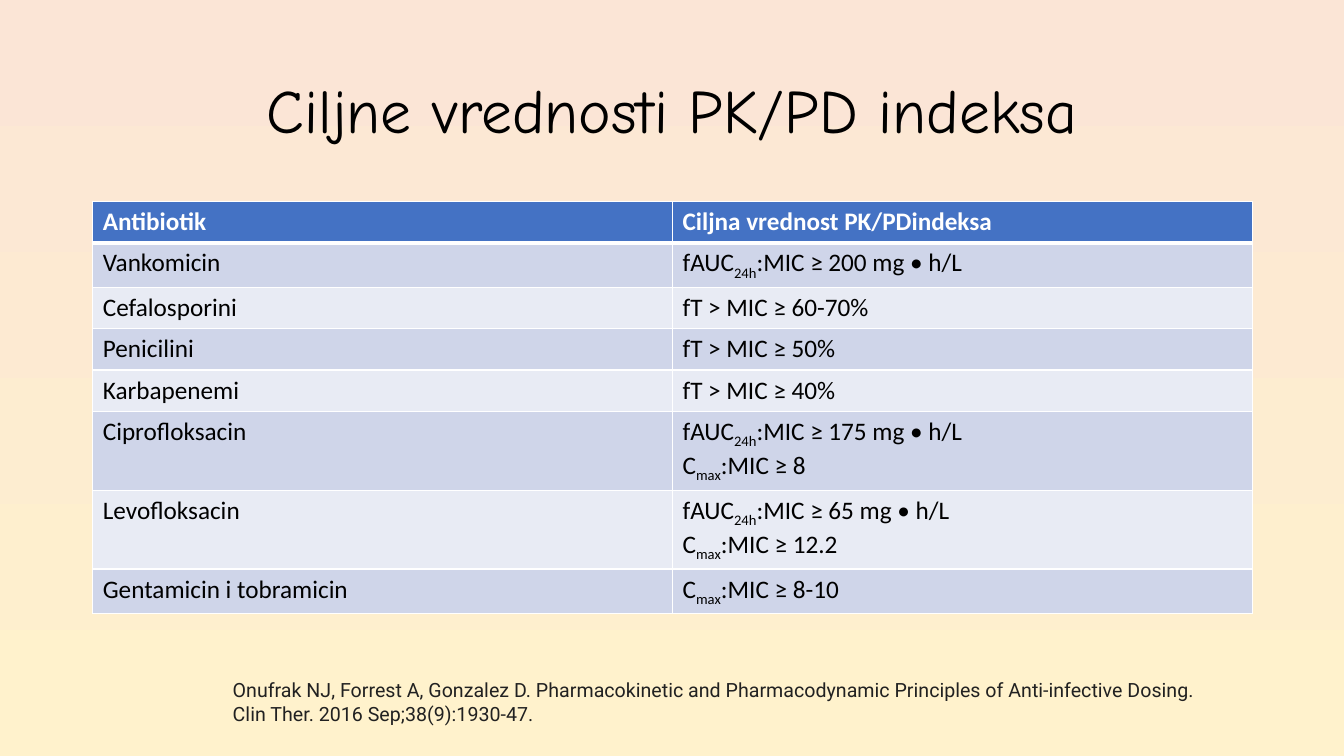
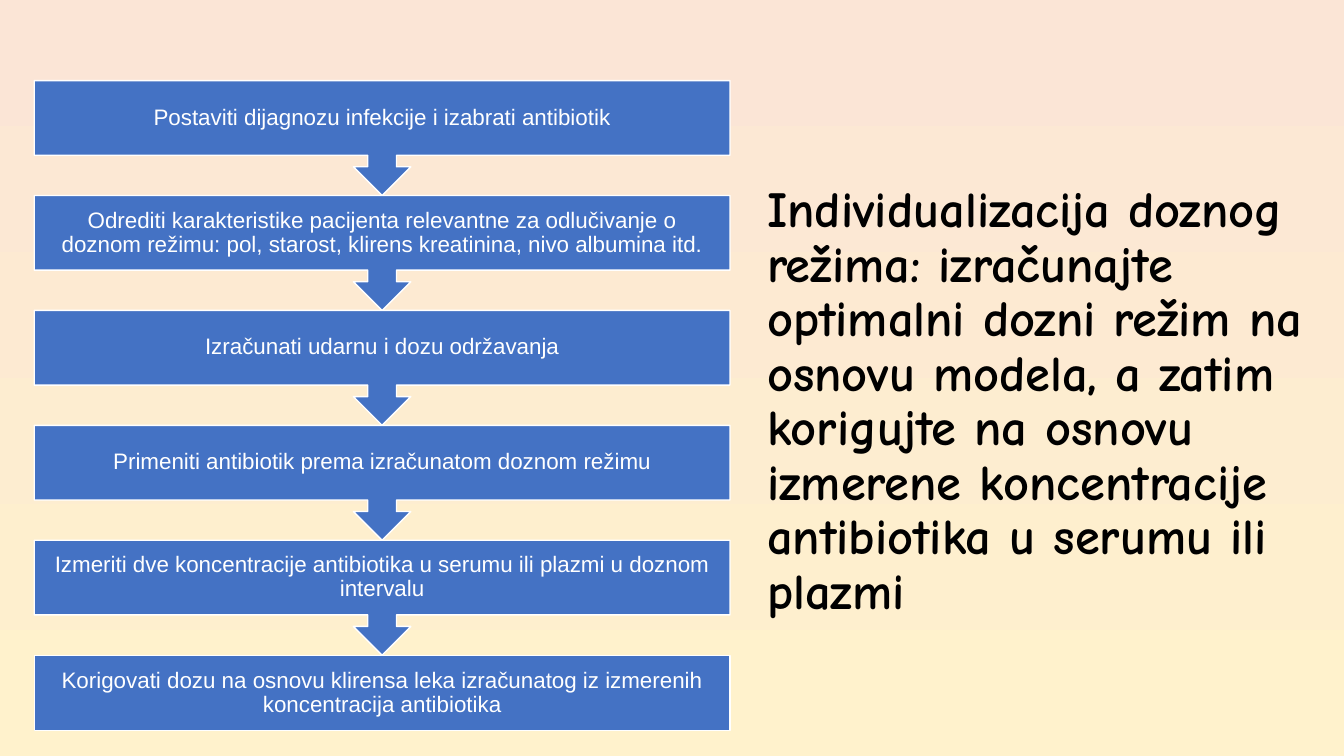
from dataclasses import dataclass
from typing import NamedTuple

import pptx
import pptx.dml.color
import pptx.enum.shapes
import pptx.enum.text
import pptx.oxml
import pptx.oxml.ns
import pptx.presentation
import pptx.shapes.autoshape
import pptx.slide
import pptx.table
import pptx.text.text
import pptx.util

Inches = pptx.util.Inches
Pt = pptx.util.Pt
Align = pptx.enum.text.PP_ALIGN
Anchor = pptx.enum.text.MSO_ANCHOR
Shape = pptx.enum.shapes.MSO_SHAPE


class Style(NamedTuple):
    font: str
    size: int
    color: str
    bold: bool = False


@dataclass(frozen=True)
class Theme:
    background_top: str = "FBE5D6"
    background_bottom: str = "FFF2CC"
    accent: str = "4472C4"
    white: str = "FFFFFF"
    bands: tuple[str, str] = ("CFD5E9", "E8EBF4")
    title: Style = Style("Comic Neue", 44, "000000")
    statement: Style = Style("Comic Neue", 36, "000000", True)
    table_head: Style = Style("Calibri", 18, "FFFFFF", True)
    table_body: Style = Style("Calibri", 18, "000000")
    citation: Style = Style("Roboto", 14, "212121")
    step: Style = Style("Arial", 16, "FFFFFF")
    thin_border: float = 0.96
    thick_border: float = 3


THEME = Theme()


class Piece(NamedTuple):
    text: str
    subscript: bool = False


Line = tuple[Piece, ...]


class Box(NamedTuple):
    left: float
    top: float
    width: float
    height: float

    def lengths(self) -> list[pptx.util.Length]:
        return [Inches(value) for value in self]


class Target(NamedTuple):
    antibiotic: str
    lines: tuple[Line, ...]


def plain(text: str) -> Line:
    return (Piece(text),)


def auc(value: str) -> Line:
    return Piece("fAUC"), Piece("24h", True), Piece(f":MIC ≥ {value} mg • h/L")


def peak(value: str) -> Line:
    return Piece("C"), Piece("max", True), Piece(f":MIC ≥ {value}")


def time_above(value: str) -> Line:
    return plain(f"fT > MIC ≥ {value}")


TARGETS = (
    Target("Vankomicin", (auc("200"),)),
    Target("Cefalosporini", (time_above("60-70%"),)),
    Target("Penicilini", (time_above("50%"),)),
    Target("Karbapenemi", (time_above("40%"),)),
    Target("Ciprofloksacin", (auc("175"), peak("8"))),
    Target("Levofloksacin", (auc("65"), peak("12.2"))),
    Target("Gentamicin i tobramicin", (peak("8-10"),)),
)

STEPS = (
    "Postaviti dijagnozu infekcije i izabrati antibiotik",
    "Odrediti karakteristike pacijenta relevantne za odlučivanje o doznom režimu: "
    "pol, starost, klirens kreatinina, nivo albumina itd.",
    "Izračunati udarnu i dozu održavanja",
    "Primeniti antibiotik prema izračunatom doznom režimu",
    "Izmeriti dve koncentracije antibiotika u serumu ili plazmi u doznom intervalu",
    "Korigovati dozu na osnovu klirensa leka izračunatog iz izmerenih "
    "koncentracija antibiotika",
)


def rgb(color: str) -> pptx.dml.color.RGBColor:
    return pptx.dml.color.RGBColor.from_string(color)


def write(frame: pptx.text.text.TextFrame, lines: tuple[Line, ...], style: Style,
          align: Align = Align.LEFT, spacing: float = 1.0) -> None:
    for index, line in enumerate(lines):
        paragraph = frame.add_paragraph() if index else frame.paragraphs[0]
        paragraph.alignment = align
        paragraph.line_spacing = spacing
        for piece in line:
            run = paragraph.add_run()
            run.text = piece.text
            run.font.name = style.font
            run.font.size = Pt(style.size)
            run.font.bold = style.bold
            run.font.color.rgb = rgb(style.color)
            if piece.subscript:
                run._r.get_or_add_rPr().set("baseline", "-25000")


def add_text(slide: pptx.slide.Slide, box: Box, lines: tuple[Line, ...], style: Style,
             align: Align = Align.LEFT, spacing: float = 1.0,
             anchor: Anchor = Anchor.TOP) -> None:
    frame = slide.shapes.add_textbox(*box.lengths()).text_frame
    frame.word_wrap = True
    frame.vertical_anchor = anchor
    write(frame, lines, style, align, spacing)


def add_title(slide: pptx.slide.Slide, box: Box, text: str, style: Style,
              align: Align = Align.LEFT) -> None:
    add_text(slide, box, plain(text) and (plain(text),), style, align, 0.9, Anchor.MIDDLE)


def set_borders(cell: pptx.table._Cell, top: float, bottom: float) -> None:
    thin = THEME.thin_border
    properties = cell._tc.get_or_add_tcPr()
    for side, width in (("L", thin), ("R", thin), ("T", top), ("B", bottom)):
        properties.append(pptx.oxml.parse_xml(
            f'<a:ln{side} {pptx.oxml.ns.nsdecls("a")} w="{Pt(width)}">'
            f'<a:solidFill><a:srgbClr val="{THEME.white}"/></a:solidFill></a:ln{side}>'))


def add_target_table(slide: pptx.slide.Slide, left: float, top: float, width: float) -> None:
    line_height, extra_line = 0.41, 0.37
    header = Target("Antibiotik", (plain("Ciljna vrednost PK/PDindeksa"),))
    rows = (header, *TARGETS)
    heights = [line_height + extra_line * (len(row.lines) - 1) for row in rows]
    box = Box(left, top, width, sum(heights))
    table = slide.shapes.add_table(len(rows), 2, *box.lengths()).table
    for row_index, row in enumerate(rows):
        table.rows[row_index].height = Inches(heights[row_index])
        is_head = row_index == 0
        fill = THEME.accent if is_head else THEME.bands[(row_index - 1) % 2]
        style = THEME.table_head if is_head else THEME.table_body
        above = THEME.thick_border if row_index == 1 else THEME.thin_border
        below = THEME.thick_border if is_head else THEME.thin_border
        for column, lines in enumerate(((plain(row.antibiotic),), row.lines)):
            cell = table.cell(row_index, column)
            set_borders(cell, above, below)
            cell.fill.solid()
            cell.fill.fore_color.rgb = rgb(fill)
            write(cell.text_frame, lines, style)


def add_step(slide: pptx.slide.Slide, kind: Shape, box: Box, text: str) -> None:
    step = slide.shapes.add_shape(kind, *box.lengths())
    step.shadow.inherit = False
    step.fill.solid()
    step.fill.fore_color.rgb = rgb(THEME.accent)
    step.line.color.rgb = rgb(THEME.white)
    step.line.width = Pt(1)
    frame = step.text_frame
    frame.word_wrap = True
    frame.vertical_anchor = Anchor.MIDDLE
    frame.margin_left = frame.margin_right = Inches(0.12)
    frame.margin_top = frame.margin_bottom = Inches(0.12)
    write(frame, (plain(text),), THEME.step, Align.CENTER, 0.9)


def add_step_chain(slide: pptx.slide.Slide, left: float, top: float, width: float) -> None:
    pitch, last_height = 1.14, 0.75
    last = len(STEPS) - 1
    for index, text in enumerate(STEPS):
        kind, height = ((Shape.RECTANGLE, last_height) if index == last
                        else (Shape.DOWN_ARROW_CALLOUT, pitch))
        add_step(slide, kind, Box(left, top + index * pitch, width, height), text)


def set_background(master: pptx.slide.SlideMaster) -> None:
    fill = master.background.fill
    fill.gradient()
    fill.gradient_angle = 270
    for stop, color in zip(fill.gradient_stops,
                           (THEME.background_top, THEME.background_bottom)):
        stop.color.rgb = rgb(color)


def build_targets(slide: pptx.slide.Slide) -> None:
    add_title(slide, Box(0.92, 0.4, 11.5, 1.45), "Ciljne vrednosti PK/PD indeksa",
              THEME.title, Align.CENTER)
    add_target_table(slide, 0.92, 2, 11.5)
    add_text(slide, Box(2.21, 6.68, 10.98, 0.56), (
        plain("Onufrak NJ, Forrest A, Gonzalez D. Pharmacokinetic and Pharmacodynamic "
              "Principles of Anti-infective Dosing."),
        plain("Clin Ther. 2016 Sep;38(9):1930-47."),
    ), THEME.citation)


def build_individualization(slide: pptx.slide.Slide) -> None:
    add_title(slide, Box(7.51, 1.1, 5.56, 5.78),
              "Individualizacija doznog režima: izračunajte optimalni dozni režim na "
              "osnovu modela, a zatim korigujte na osnovu izmerene koncentracije "
              "antibiotika u serumu ili plazmi", THEME.statement)
    add_step_chain(slide, 0.34, 0.8, 6.9)


def main() -> None:
    deck = pptx.Presentation()
    deck.slide_width, deck.slide_height = Inches(13.33), Inches(7.5)
    set_background(deck.slide_master)
    blank = deck.slide_layouts[6]
    for build in (build_targets, build_individualization):
        build(deck.slides.add_slide(blank))
    deck.save("out.pptx")


if __name__ == "__main__":
    main()
